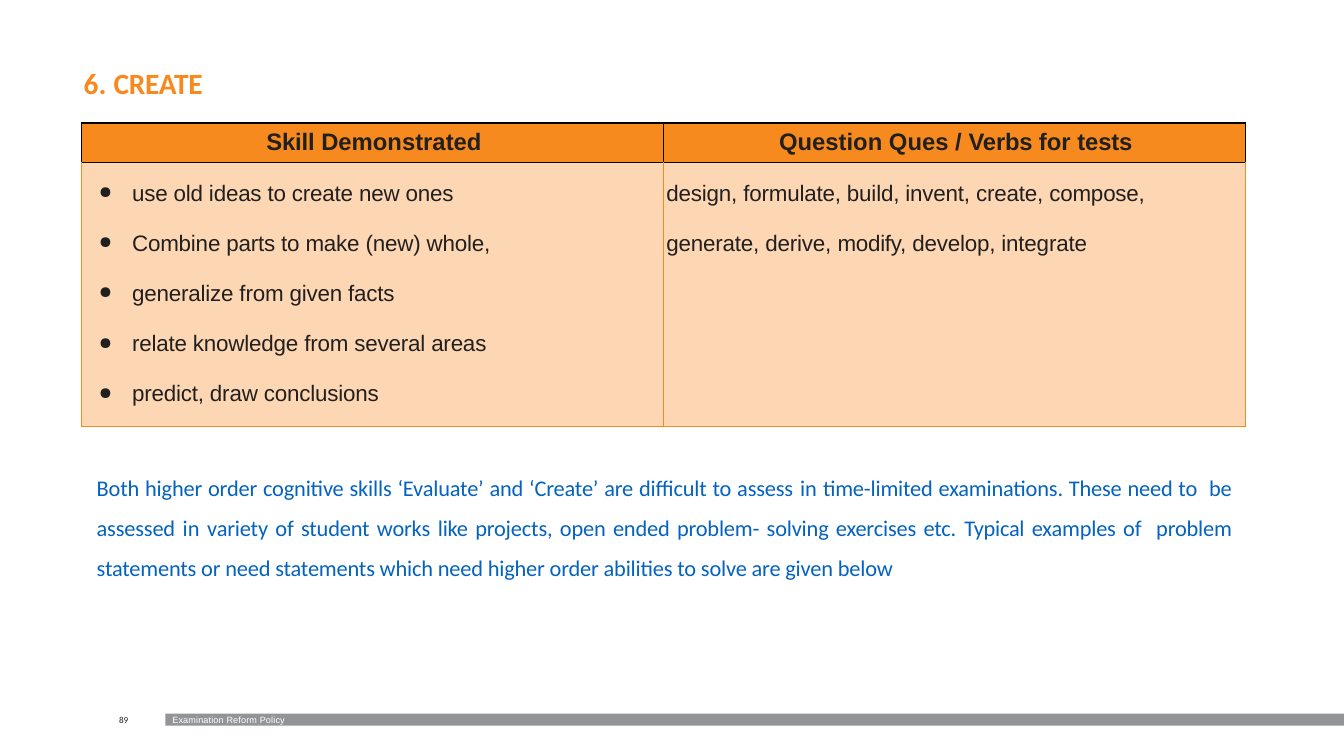
from dataclasses import dataclass

from lxml import etree
from pptx import Presentation
from pptx.dml.color import RGBColor
from pptx.enum.shapes import MSO_SHAPE
from pptx.enum.text import MSO_ANCHOR, MSO_AUTO_SIZE, PP_ALIGN
from pptx.oxml.ns import qn
from pptx.util import Inches, Pt

LEFT, CENTER, JUSTIFY = PP_ALIGN.LEFT, PP_ALIGN.CENTER, PP_ALIGN.JUSTIFY
TOP = MSO_ANCHOR.TOP
GROW = MSO_AUTO_SIZE.SHAPE_TO_FIT_TEXT
RECTANGLE = MSO_SHAPE.RECTANGLE
TITLE_ONLY = 5


@dataclass(frozen=True)
class Theme:
    orange: str = "F68A1E"
    peach: str = "FDD7B3"
    blue: str = "0462C1"
    grey: str = "929497"
    ink: str = "221F1F"
    white: str = "FFFFFF"
    black: str = "000000"
    heading_font: str = "Calibri"
    table_font: str = "Arial"
    title_size: float = 21
    header_size: float = 17
    body_size: float = 16
    footer_size: float = 6.5


THEME = Theme()


@dataclass(frozen=True)
class TextStyle:
    font: str
    size: float
    color: str
    bold: bool = False
    align: PP_ALIGN = LEFT
    indent: float = 0.01
    hanging: float = 0
    space_before: float = 0
    line_spacing: float | None = None
    bullet: str = ""


@dataclass(frozen=True)
class Piece:
    """A stretch of text with its letter spacing in points."""
    text: str
    tracking: float = 0


@dataclass(frozen=True)
class TextBox:
    left: float
    top: float
    width: float
    height: float
    style: TextStyle
    pieces: list[Piece]
    top_inset: float = 0.01


@dataclass(frozen=True)
class Column:
    header: list[Piece]
    lines: list[list[Piece]]
    style: TextStyle


TITLE_STYLE = TextStyle(THEME.heading_font, THEME.title_size, THEME.orange, bold=True, space_before=1.4)
NOTE_STYLE = TextStyle(THEME.heading_font, THEME.body_size, THEME.blue, align=JUSTIFY, space_before=0.9,
                       line_spacing=1.5)
FOOTER_STYLE = TextStyle(THEME.table_font, THEME.footer_size, THEME.white, space_before=0.6)
NUMBER_STYLE = TextStyle(THEME.heading_font, THEME.footer_size, THEME.ink, indent=0.04)
HEADER_STYLE = TextStyle(THEME.table_font, THEME.header_size, THEME.ink, bold=True, align=CENTER, indent=0.03)
VERB_STYLE = TextStyle(THEME.table_font, THEME.body_size, THEME.ink, indent=0.03, space_before=18)
SKILL_STYLE = TextStyle(THEME.table_font, THEME.body_size, THEME.ink, indent=0.5, hanging=0.33, space_before=18,
                        bullet="●")

TITLE = TextBox(0.82, 0.63, 1.24, 0.38, TITLE_STYLE, [Piece("6. ", 0.1), Piece("CREATE", -0.2)], 0.02)
TEXT_BOXES = [
    TextBox(0.95, 4.56, 11.27, 1.23, NOTE_STYLE, [
        Piece("Both higher order cognitive skills ‘Evaluate’ and ‘Create’ are difficult to assess ", -0.1),
        Piece("in "),
        Piece("time-limited examinations. These need to  be assessed ", -0.1),
        Piece("in "),
        Piece("variety of student works ", -0.1),
        Piece("like ", -0.2),
        Piece("projects, open ended problem- solving exercises etc. ", -0.1),
        Piece("Typical ", -0.2),
        Piece("examples of  problem statements or need statements which need higher order "
              "abilities to solve are given below", -0.1),
    ]),
    TextBox(1.7, 7.08, 1.15, 0.13, FOOTER_STYLE, [Piece("Examination Reform Policy", 0.1)]),
    TextBox(1.14, 7.09, 0.18, 0.12, NUMBER_STYLE, [Piece("89", 0.1)], 0),
]
SKILLS = [
    "use old ideas to create new ones",
    "Combine parts to make (new) whole,",
    "generalize from given facts",
    "relate knowledge from several areas",
    "predict, draw conclusions",
]
COLUMNS = [
    Column([Piece("Skill ", -0.1), Piece("Demonstrated")],
           [[Piece(skill, -0.1)] for skill in SKILLS], SKILL_STYLE),
    Column([Piece("Question Ques / "), Piece("Verbs ", -0.2), Piece("for "), Piece("tests", -0.1)],
           [[Piece("design, formulate, build, invent, create, compose,", -0.1)],
            [Piece("generate, derive, ", -0.1), Piece("modify, ", -0.2), Piece("develop, integrate", -0.1)]],
           VERB_STYLE),
]


def write_paragraph(paragraph, pieces: list[Piece], style: TextStyle, space_before: float) -> None:
    paragraph.alignment = style.align
    paragraph.space_before = Pt(space_before)
    if style.line_spacing:
        paragraph.line_spacing = style.line_spacing
    properties = paragraph._p.get_or_add_pPr()
    properties.set("marL", str(Inches(style.indent)))
    properties.set("indent", str(-Inches(style.hanging)))
    if style.bullet:
        etree.SubElement(properties, qn("a:buSzPct")).set("val", "75000")
        etree.SubElement(properties, qn("a:buChar")).set("char", style.bullet)
    for piece in pieces:
        run = paragraph.add_run()
        run.text = piece.text
        run.font.name = style.font
        run.font.size = Pt(style.size)
        run.font.bold = style.bold
        run.font.color.rgb = RGBColor.from_string(style.color)
        run._r.get_or_add_rPr().set("spc", str(round(piece.tracking * 100)))


def fill_text_box(shape, box: TextBox) -> None:
    shape.left, shape.top = Inches(box.left), Inches(box.top)
    shape.width, shape.height = Inches(box.width), Inches(box.height)
    frame = shape.text_frame
    frame.word_wrap = True
    frame.auto_size = GROW
    frame.vertical_anchor = TOP
    frame.margin_left = frame.margin_right = frame.margin_bottom = 0
    frame.margin_top = Inches(box.top_inset)
    write_paragraph(frame.paragraphs[0], box.pieces, box.style, box.style.space_before)


def set_borders(cell, colors: dict[str, str]) -> None:
    properties = cell._tc.get_or_add_tcPr()
    for position, side in enumerate("LRTB"):
        color = colors[side]
        line = etree.Element(qn(f"a:ln{side}"), w=str(Pt(1 if color == THEME.black else 0.75)))
        fill = etree.SubElement(line, qn("a:solidFill"))
        etree.SubElement(fill, qn("a:srgbClr")).set("val", color)
        properties.insert(position, line)


def fill_cell(cell, lines: list[list[Piece]], style: TextStyle, fill: str, border: str, top_inset: float) -> None:
    cell.fill.solid()
    cell.fill.fore_color.rgb = RGBColor.from_string(fill)
    cell.margin_left = cell.margin_right = cell.margin_bottom = 0
    cell.margin_top = Inches(top_inset)
    set_borders(cell, {"L": border, "R": border, "T": THEME.black, "B": border})
    frame = cell.text_frame
    for index, pieces in enumerate(lines):
        paragraph = frame.add_paragraph() if index else frame.paragraphs[0]
        write_paragraph(paragraph, pieces, style, style.space_before if index else 0)


def add_skill_table(slide) -> None:
    frame = slide.shapes.add_table(2, len(COLUMNS), Inches(0.81), Inches(1.22), Inches(11.54), Inches(3.01))
    table = frame.table
    table.first_row = table.horz_banding = False
    table.rows[0].height, table.rows[1].height = Inches(0.39), Inches(2.62)
    for index, column in enumerate(COLUMNS):
        table.columns[index].width = Inches(5.77)
        fill_cell(table.cell(0, index), [column.header], HEADER_STYLE, THEME.orange, THEME.black, 0.06)
        fill_cell(table.cell(1, index), column.lines, column.style, THEME.peach, THEME.orange, 0.19)


def main() -> None:
    presentation = Presentation()
    presentation.slide_width, presentation.slide_height = Inches(13.33), Inches(7.5)
    slide = presentation.slides.add_slide(presentation.slide_layouts[TITLE_ONLY])

    # Footer bar
    bar = slide.shapes.add_shape(RECTANGLE, Inches(1.64), Inches(7.08), Inches(11.69), Inches(0.12))
    bar.shadow.inherit = False
    bar.fill.solid()
    bar.fill.fore_color.rgb = RGBColor.from_string(THEME.grey)
    bar.line.fill.background()

    # Title, note and footer texts
    fill_text_box(slide.shapes.title, TITLE)
    for box in TEXT_BOXES:
        fill_text_box(slide.shapes.add_textbox(0, 0, 0, 0), box)

    # Skills and verbs
    add_skill_table(slide)
    presentation.save("out.pptx")


if __name__ == "__main__":
    main()
